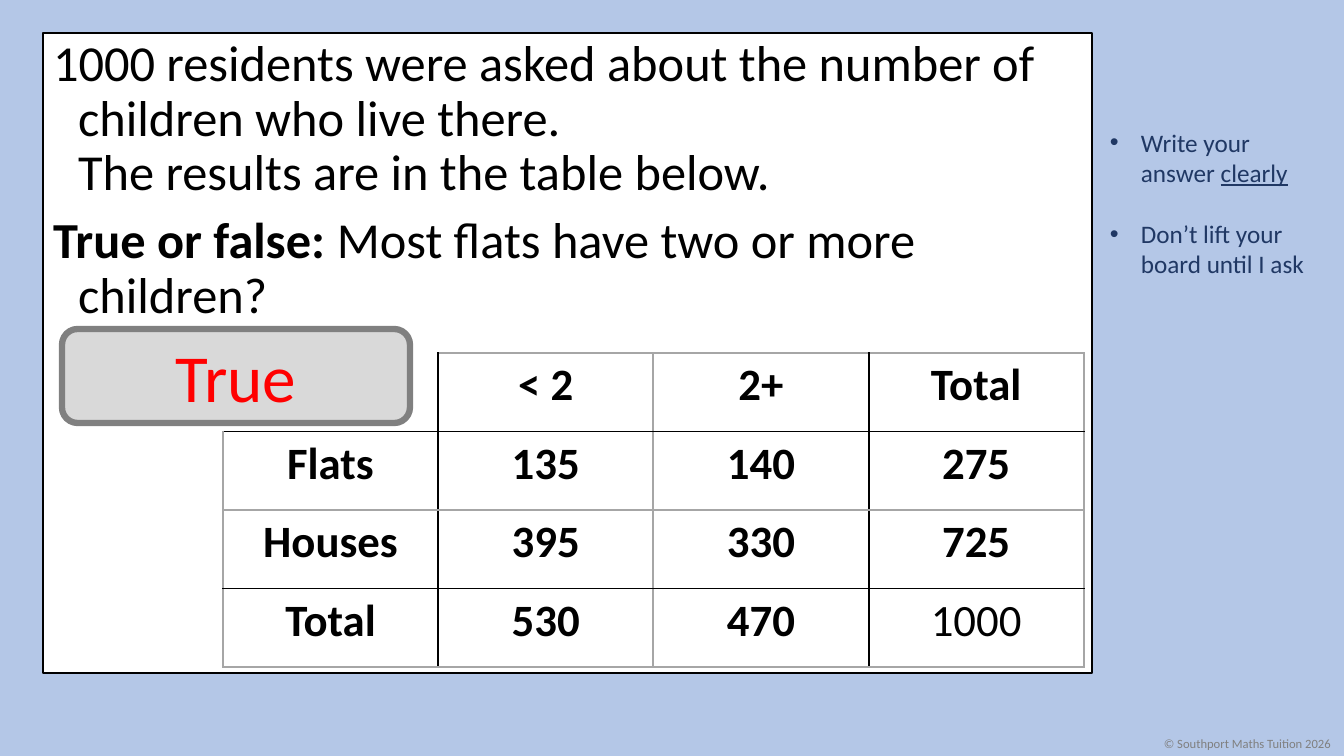
"""Build a maths question slide with a two-way table."""
from dataclasses import dataclass

from lxml import etree
from pptx import Presentation
from pptx import util as u
from pptx.dml.color import RGBColor
from pptx.enum import shapes, text
from pptx.oxml import ns

SCALE = 914400 / 100.8


@dataclass(frozen=True)
class Theme:
    """Colours, font and type sizes of the slide."""
    font: str = "Calibri"
    backdrop: str = "B4C7E7"
    paper: str = "FFFFFF"
    ink: str = "000000"
    grid: str = "A6A6A6"
    reminder: str = "203864"
    button: str = "D9D9D9"
    muted: str = "808080"
    answer: str = "FF0000"
    question_size: int = 36
    table_size: int = 32
    answer_size: int = 48
    reminder_size: int = 18
    footer_size: int = 9


THEME = Theme()
TABLE_ROWS = [
    ["", "< 2", "2+", "Total"],
    ["Flats", "135", "140", "275"],
    ["Houses", "395", "330", "725"],
    ["Total", "530", "470", "1000"],
]


def px(length):
    """Turn pixels into EMU."""
    return u.Emu(round(length * SCALE))


def frame(*lengths):
    """Turn a left, top, width and height in pixels into EMU."""
    return [px(length) for length in lengths]


def rgb(colour):
    """Turn a hex string into a colour."""
    return RGBColor.from_string(colour)


def add_span(para, words, *, size, colour=THEME.ink, bold=False, underline=False):
    """Add formatted text to a paragraph, breaking lines at newlines."""
    for number, line in enumerate(words.split("\n")):
        if number:
            para.add_line_break()
        span = para.add_run()
        span.text = line
        span.font.name = THEME.font
        span.font.size = u.Pt(size)
        span.font.color.rgb = rgb(colour)
        span.font.bold = bold
        span.font.underline = underline


def hang(para, indent, bullet=None):
    """Give a paragraph a hanging indent, with or without a bullet."""
    properties = para._p.get_or_add_pPr()
    properties.set("marL", str(px(indent)))
    properties.set("indent", str(-px(indent)))
    if bullet:
        etree.SubElement(properties, ns.qn("a:buFont"), typeface="Arial")
        etree.SubElement(properties, ns.qn("a:buChar"), char=bullet)
    else:
        etree.SubElement(properties, ns.qn("a:buNone"))


def next_paragraph(box, number, gap):
    """Return the numbered paragraph, spaced from the one before it."""
    para = box.add_paragraph() if number else box.paragraphs[0]
    para.space_before = u.Pt(gap if number else 0)
    return para


def add_panel(page, kind, place, *, fill, line, weight):
    """Add a filled and outlined shape."""
    panel = page.shapes.add_shape(kind, *frame(*place))
    panel.shadow.inherit = False
    panel.fill.solid()
    panel.fill.fore_color.rgb = rgb(fill)
    panel.line.color.rgb = rgb(line)
    panel.line.width = u.Pt(weight)
    return panel


def add_question(page, place):
    """Fill the body placeholder with the question on its white panel."""
    add_panel(page, shapes.MSO_SHAPE.RECTANGLE, place,
              fill=THEME.paper, line=THEME.ink, weight=1)
    body = page.placeholders[1]
    body.left, body.top, body.width, body.height = frame(*place)
    page.shapes.element.append(body.element)
    box = body.text_frame
    box.auto_size = text.MSO_AUTO_SIZE.NONE
    paragraphs = [
        [("1000 residents were asked about the number of children who live there."
          "\nThe results are in the table below.", False)],
        [("True or false: ", True), ("Most flats have two or more children?", False)],
    ]
    for number, spans in enumerate(paragraphs):
        para = next_paragraph(box, number, 10)
        hang(para, 25)
        para.line_spacing = 0.9
        for words, bold in spans:
            add_span(para, words, size=THEME.question_size, bold=bold)


def add_reminders(page, place):
    """Add the bulleted reminders beside the panel."""
    box = page.shapes.add_textbox(*frame(*place)).text_frame
    box.word_wrap = True
    reminders = [
        [("Write your answer ", False), ("clearly", True)],
        [("Don’t lift your board until I ask", False)],
    ]
    for number, spans in enumerate(reminders):
        para = next_paragraph(box, number, 22)
        hang(para, 31, "•")
        for words, underline in spans:
            add_span(para, words, size=THEME.reminder_size,
                     colour=THEME.reminder, underline=underline)


def add_footer(page, place):
    """Add the copyright line."""
    box = page.shapes.add_textbox(*frame(*place)).text_frame
    box.word_wrap = False
    add_span(box.paragraphs[0], "© Southport Maths Tuition 2026",
             size=THEME.footer_size, colour=THEME.muted)


def set_borders(cell, row, column):
    """Draw cell edges: odd grid lines black, even ones grey, open top-left corner."""
    properties = cell._tc.get_or_add_tcPr()
    edges = {"a:lnL": column, "a:lnR": column + 1, "a:lnT": row, "a:lnB": row + 1}
    for tag, position in edges.items():
        edge = etree.SubElement(properties, ns.qn(tag), w=str(u.Pt(1.5)))
        if row == column == position == 0:
            etree.SubElement(edge, ns.qn("a:noFill"))
            continue
        paint = etree.SubElement(edge, ns.qn("a:solidFill"))
        colour = THEME.ink if position % 2 else THEME.grid
        etree.SubElement(paint, ns.qn("a:srgbClr"), val=colour)


def add_results(page, place):
    """Add the two-way table of results."""
    table = page.shapes.add_table(
        len(TABLE_ROWS), len(TABLE_ROWS[0]), *frame(*place)).table
    table.first_row = table.horz_banding = False
    for row, values in enumerate(TABLE_ROWS):
        for column, value in enumerate(values):
            cell = table.cell(row, column)
            set_borders(cell, row, column)
            cell.fill.solid()
            cell.fill.fore_color.rgb = rgb(THEME.paper)
            para = cell.text_frame.paragraphs[0]
            para.alignment = text.PP_ALIGN.CENTER
            if value:
                add_span(para, value, size=THEME.table_size, bold=value != "1000")


def add_answer(page, place):
    """Add the rounded answer button."""
    button = add_panel(page, shapes.MSO_SHAPE.ROUNDED_RECTANGLE, place,
                       fill=THEME.button, line=THEME.muted, weight=4.5)
    box = button.text_frame
    box.vertical_anchor = text.MSO_ANCHOR.MIDDLE
    box.paragraphs[0].alignment = text.PP_ALIGN.CENTER
    add_span(box.paragraphs[0], "True", size=THEME.answer_size, colour=THEME.answer)


def main():
    """Build and save the deck."""
    deck = Presentation()
    deck.slide_width, deck.slide_height = px(1344), px(756)
    page = deck.slides.add_slide(deck.slide_layouts[1])
    page.background.fill.solid()
    page.background.fill.fore_color.rgb = rgb(THEME.backdrop)
    page.shapes.element.remove(page.shapes.title.element)
    add_reminders(page, (1100, 122, 234, 163))
    add_footer(page, (1154, 731, 190, 25))
    add_question(page, (43, 33, 1049, 640))
    add_results(page, (223, 353, 861, 314))
    add_answer(page, (62, 329, 348, 94))
    deck.save("out.pptx")


if __name__ == "__main__":
    main()
